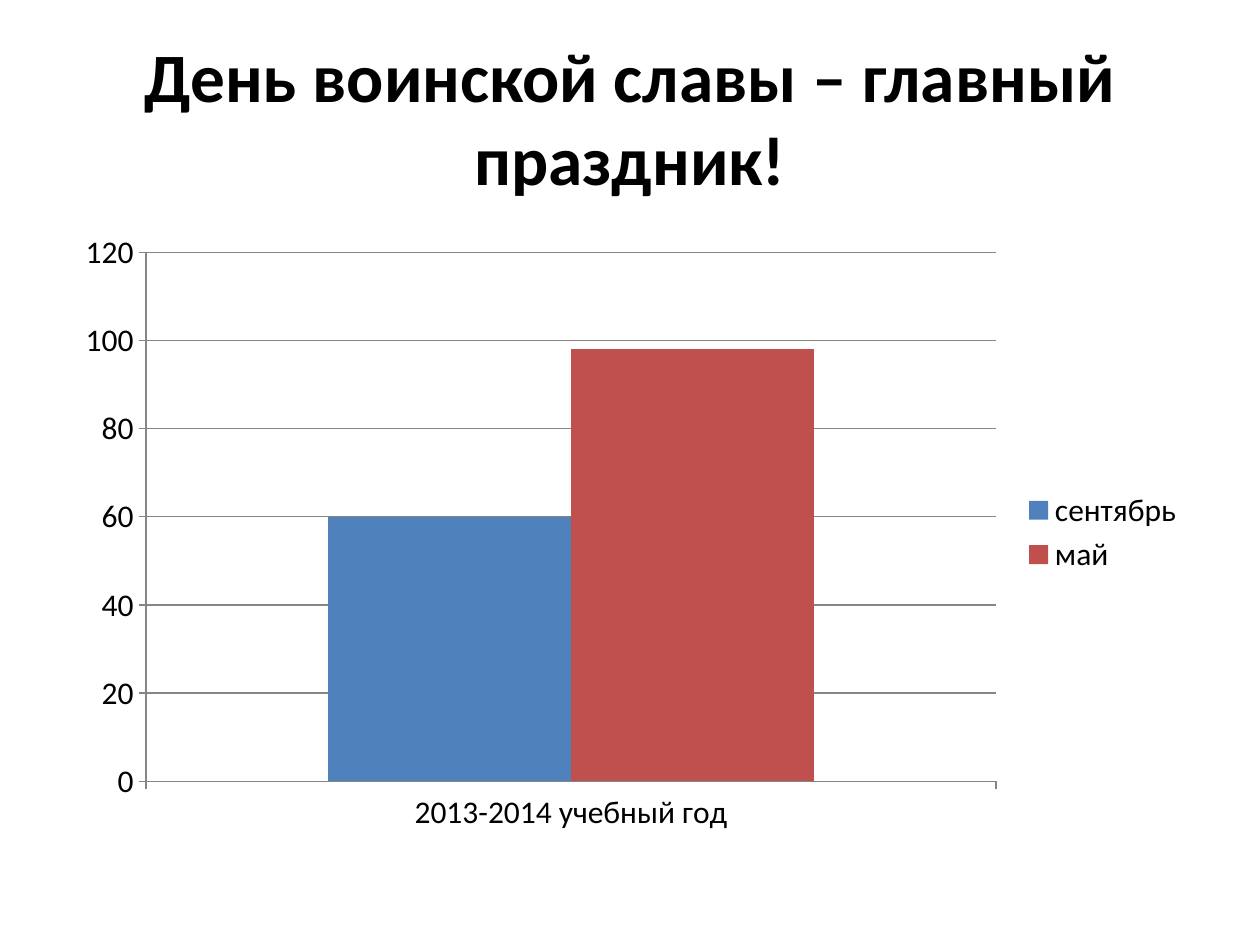
from pptx import Presentation
from pptx import util as u
from pptx.chart.data import CategoryChartData
from pptx.dml.color import RGBColor
from pptx.enum import chart as ch, text

FONT = "Calibri"
BLACK, GREY = "000000", "868686"
SERIES = [("сентябрь", 60, "4F81BD"), ("май", 98, "C0504D")]


def rgb(value):
    return RGBColor.from_string(value)


def style_font(font, size, bold=False):
    font.name, font.size, font.bold = FONT, u.Pt(size), bold
    font.color.rgb = rgb(BLACK)


def add_title(s, box, wording):
    sp = s.shapes.title
    sp.left, sp.top, sp.width, sp.height = box
    tf = sp.text_frame
    tf.word_wrap = True
    tf.auto_size = text.MSO_AUTO_SIZE.NONE
    tf.vertical_anchor = text.MSO_ANCHOR.MIDDLE
    p = tf.paragraphs[0]
    p.alignment = text.PP_ALIGN.CENTER
    r = p.add_run()
    r.text = wording
    style_font(r.font, 39.6, bold=True)


def style_line(line):
    line.color.rgb = rgb(GREY)
    line.width = u.Pt(0.75)


def add_results_chart(s, box):
    data = CategoryChartData()
    data.categories = ["2013-2014 учебный год"]
    for name, value, _ in SERIES:
        data.add_series(name, [value])
    chart = s.shapes.add_chart(ch.XL_CHART_TYPE.COLUMN_CLUSTERED, *box, data).chart
    style_font(chart.font, 18)
    chart.has_title = False
    chart.has_legend = True
    chart.legend.position = ch.XL_LEGEND_POSITION.RIGHT
    chart.legend.include_in_layout = False

    plot = chart.plots[0]
    plot.gap_width, plot.overlap, plot.vary_by_categories = 150, 0, False
    for series, (_, _, color) in zip(plot.series, SERIES):
        series.format.fill.solid()
        series.format.fill.fore_color.rgb = rgb(color)

    for axis in (chart.category_axis, chart.value_axis):
        axis.major_tick_mark = ch.XL_TICK_MARK.OUTSIDE
        axis.minor_tick_mark = ch.XL_TICK_MARK.NONE
        style_line(axis.format.line)
    axis = chart.value_axis
    axis.minimum_scale, axis.maximum_scale, axis.major_unit = 0, 120, 20
    axis.has_major_gridlines = True
    style_line(axis.major_gridlines.format.line)


def main():
    prs = Presentation()
    prs.slide_width, prs.slide_height = u.Cm(25.4), u.Cm(19.05)
    s = prs.slides.add_slide(prs.slide_layouts[5])
    left, width = u.Cm(1.27), u.Cm(22.86)
    add_title(s, (left, u.Cm(0.76), width, u.Cm(3.18)),
              "День воинской славы – главный праздник!")
    add_results_chart(s, (left, u.Cm(4.45), width, u.Cm(12.57)))
    prs.save("out.pptx")


if __name__ == "__main__":
    main()
